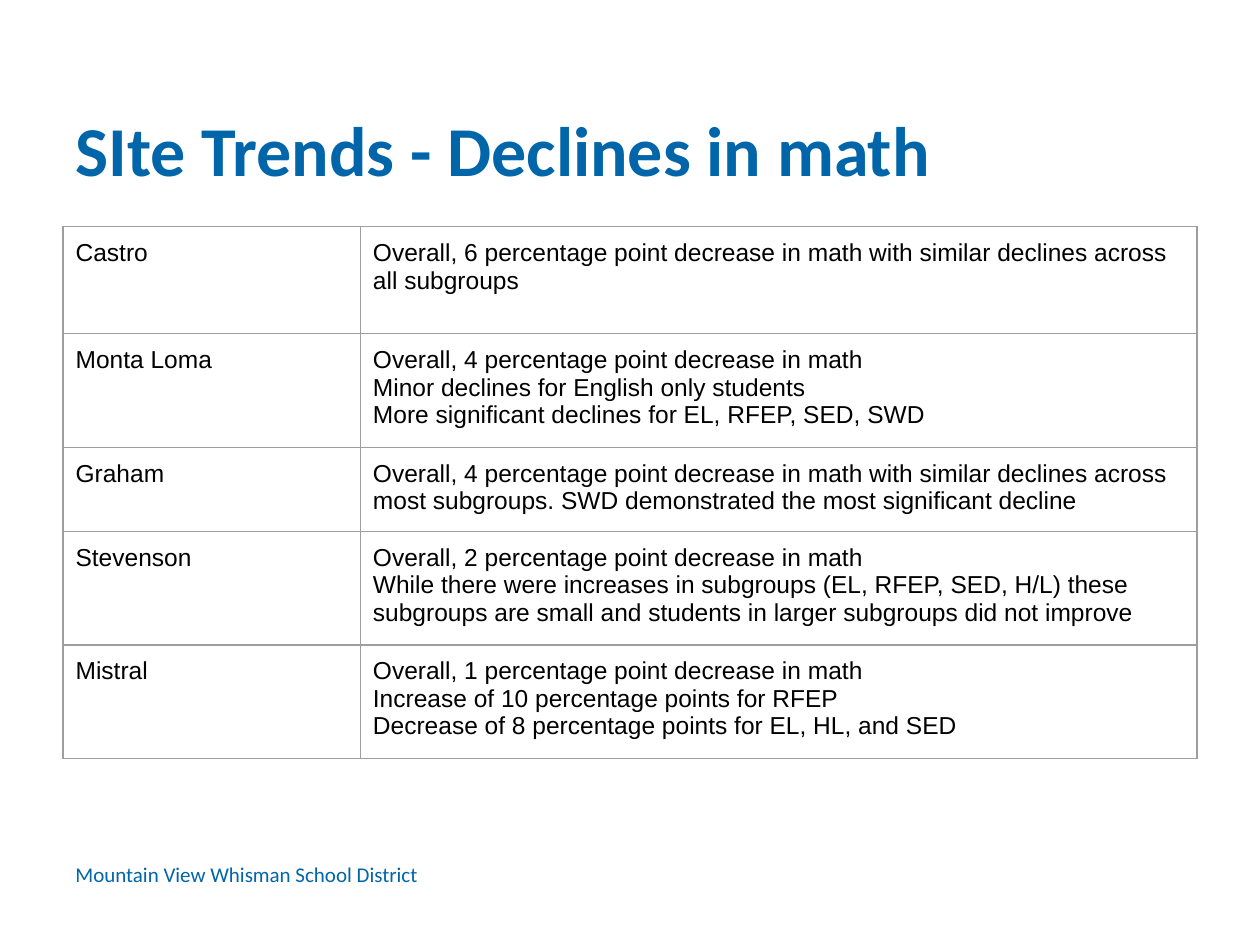
from dataclasses import dataclass

from lxml import etree
from pptx import Presentation
from pptx.dml.color import RGBColor
from pptx.enum.text import MSO_ANCHOR
from pptx.oxml.ns import qn
from pptx.slide import Slide
from pptx.util import Inches, Pt

MIDDLE = MSO_ANCHOR.MIDDLE
TOP = MSO_ANCHOR.TOP
COLORS = {"blue": "0065A9", "black": "000000", "grid": "9E9E9E"}
COLUMN_WIDTHS = [2.36, 6.64]
TALL, SHORT = 0.85, 0.63
SITE_TRENDS = [
    ("Castro", TALL, [
        "Overall, 6 percentage point decrease in math with similar declines across all subgroups",
    ]),
    ("Monta Loma", TALL, [
        "Overall, 4 percentage point decrease in math",
        "Minor declines for English only students",
        "More significant declines for EL, RFEP, SED, SWD",
    ]),
    ("Graham", SHORT, [
        "Overall, 4 percentage point decrease in math with similar declines across "
        "most subgroups. SWD demonstrated the most significant decline",
    ]),
    ("Stevenson", TALL, [
        "Overall, 2 percentage point decrease in math",
        "While there were increases in subgroups (EL, RFEP, SED, H/L) these "
        "subgroups are small and students in larger subgroups did not improve",
    ]),
    ("Mistral", TALL, [
        "Overall, 1 percentage point decrease in math",
        "Increase of 10 percentage points for RFEP",
        "Decrease of 8 percentage points for EL, HL, and SED",
    ]),
]


def write_text(frame, lines, *, font, size, color, bold=False):
    for index, line in enumerate(lines):
        para = frame.paragraphs[0] if index == 0 else frame.add_paragraph()
        span = para.add_run()
        span.text = line
        span.font.name = font
        span.font.size = Pt(size)
        span.font.bold = bold
        span.font.color.rgb = RGBColor.from_string(COLORS[color])


@dataclass
class SlideBuilder:
    page: Slide
    heading_font: str = "Calibri"
    body_font: str = "Arial"
    padding: float = 0.1
    border_width: float = 0.75

    def text(self, content, left, top, width, height, *, size, bold=False,
             anchor=TOP, vertical_padding=0.1):
        box = self.page.shapes.add_textbox(
            Inches(left), Inches(top), Inches(width), Inches(height))
        frame = box.text_frame
        frame.word_wrap = True
        frame.vertical_anchor = anchor
        frame.margin_left = frame.margin_right = Inches(self.padding)
        frame.margin_top = frame.margin_bottom = Inches(vertical_padding)
        write_text(frame, [content], font=self.heading_font, size=size,
                   color="blue", bold=bold)

    def border(self, cell):
        properties = cell._tc.get_or_add_tcPr()
        for side in ("lnL", "lnR", "lnT", "lnB"):
            line = etree.SubElement(properties, qn(f"a:{side}"),
                                    w=str(Pt(self.border_width)))
            fill = etree.SubElement(line, qn("a:solidFill"))
            etree.SubElement(fill, qn("a:srgbClr"), val=COLORS["grid"])

    def table(self, rows, left, top, widths):
        total_height = sum(height for _, height, _ in rows)
        frame = self.page.shapes.add_table(
            len(rows), len(widths), Inches(left), Inches(top),
            Inches(sum(widths)), Inches(total_height))
        table = frame.table
        table.first_row = False
        table.horz_banding = False
        for column, width in zip(table.columns, widths):
            column.width = Inches(width)
        for row, (site, height, trends) in zip(table.rows, rows):
            row.height = Inches(height)
            for cell, lines in zip(row.cells, ([site], trends)):
                cell.margin_left = cell.margin_right = Inches(self.padding)
                cell.margin_top = cell.margin_bottom = Inches(self.padding)
                self.border(cell)
                cell.fill.background()
                write_text(cell.text_frame, lines, font=self.body_font,
                           size=14, color="black")


def main():
    deck = Presentation()
    deck.slide_width, deck.slide_height = Inches(10), Inches(7.5)
    builder = SlideBuilder(deck.slides.add_slide(deck.slide_layouts[6]))
    builder.text("Mountain View Whisman School District", 0.5, 6.79, 3.54, 0.3,
                 size=12, vertical_padding=0.05)
    builder.text("SIte Trends - Declines in math", 0.5, 0.55, 9, 1.25,
                 size=40, bold=True, anchor=MIDDLE)
    builder.table(SITE_TRENDS, 0.5, 1.8, COLUMN_WIDTHS)
    deck.save("out.pptx")


if __name__ == "__main__":
    main()
